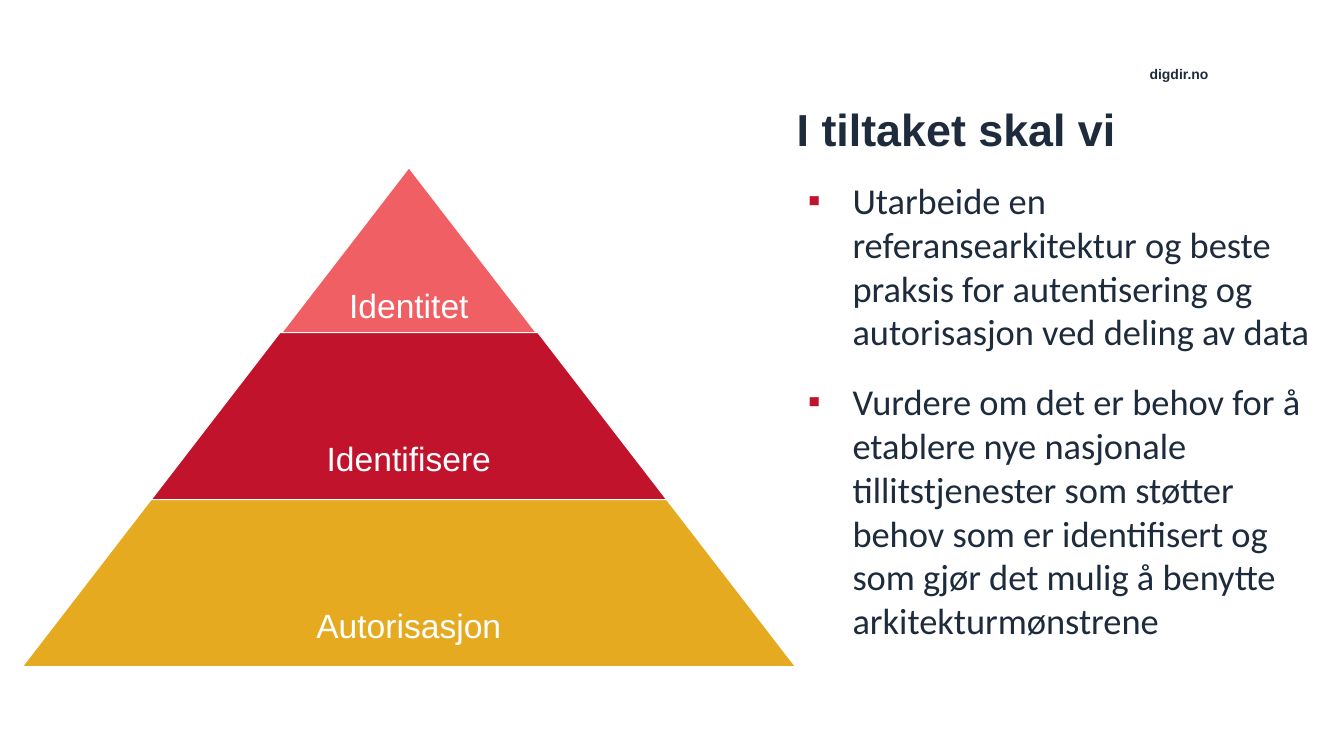
import pptx
import pptx.dml.color
import pptx.enum.shapes
import pptx.enum.text
import pptx.util
from lxml import etree
from pptx.util import Inches

NAVY = "1E2B3C"
RED = "C2132C"
WHITE = "FFFFFF"


def colour(value):
    return pptx.dml.color.RGBColor.from_string(value)


class SlideBuilder:
    heading_font = "Arial"
    body_font = "Calibri"

    def __init__(self, page):
        self.page = page

    def style(self, para, size, name, value, bold=False):
        para.font.size = pptx.util.Pt(size)
        para.font.name = name
        para.font.bold = bold
        para.font.color.rgb = colour(value)

    def title(self, text, left, top, width, height):
        box = self.page.shapes.title
        box.left, box.top = Inches(left), Inches(top)
        box.width, box.height = Inches(width), Inches(height)
        frame = box.text_frame
        frame.word_wrap = True
        frame.auto_size = pptx.enum.text.MSO_AUTO_SIZE.NONE
        frame.vertical_anchor = pptx.enum.text.MSO_ANCHOR.TOP
        frame.text = text
        para = frame.paragraphs[0]
        para.alignment = pptx.enum.text.PP_ALIGN.LEFT
        para.line_spacing = 0.9
        para.space_before = pptx.util.Pt(0)
        self.style(para, 42.7, self.heading_font, NAVY, bold=True)

    def text_box(self, left, top, width, height):
        box = self.page.shapes.add_textbox(
            Inches(left), Inches(top), Inches(width), Inches(height))
        box.text_frame.word_wrap = True
        return box.text_frame

    def label(self, text, *place):
        para = self.text_box(*place).paragraphs[0]
        para.text = text
        self.style(para, 13.3, self.heading_font, NAVY, bold=True)

    def tier(self, text, fill, centre, top, width, height, bottom_inset):
        shape = self.page.shapes.add_shape(
            pptx.enum.shapes.MSO_SHAPE.TRAPEZOID,
            Inches(centre - width / 2), Inches(top), Inches(width), Inches(height))
        shape.adjustments[0] = 0.771
        shape.shadow.inherit = False
        shape.fill.solid()
        shape.fill.fore_color.rgb = colour(fill)
        shape.line.color.rgb = colour(WHITE)
        shape.line.width = pptx.util.Pt(1)
        frame = shape.text_frame
        frame.word_wrap = False
        frame.vertical_anchor = pptx.enum.text.MSO_ANCHOR.BOTTOM
        frame.margin_left = frame.margin_right = frame.margin_top = Inches(0.04)
        frame.margin_bottom = Inches(bottom_inset)
        para = frame.paragraphs[0]
        para.text = text
        para.alignment = pptx.enum.text.PP_ALIGN.CENTER
        para.line_spacing = 0.9
        self.style(para, 32, self.heading_font, WHITE)

    def bullet(self, para):
        properties = para._p.get_or_add_pPr()
        properties.set("marL", str(Inches(0.59)))
        properties.set("indent", str(-Inches(0.59)))
        namespace = pptx.oxml.ns.qn
        bullet_colour = etree.SubElement(properties, namespace("a:buClr"))
        etree.SubElement(bullet_colour, namespace("a:srgbClr"), val=RED)
        etree.SubElement(properties, namespace("a:buFont"), typeface=self.heading_font)
        etree.SubElement(properties, namespace("a:buChar"), char="▪")

    def bullet_list(self, items, *place):
        frame = self.text_box(*place)
        for index, item in enumerate(items):
            para = frame.add_paragraph() if index else frame.paragraphs[0]
            para.text = item
            self.bullet(para)
            para.space_before = pptx.util.Pt(25 if index else 0)
            self.style(para, 34.7, self.body_font, NAVY)


def main():
    deck = pptx.Presentation()
    deck.slide_width, deck.slide_height = Inches(17.78), Inches(10)
    builder = SlideBuilder(deck.slides.add_slide(deck.slide_layouts[5]))

    builder.label("digdir.no", 15.11, 0.82, 1.13, 0.33)

    tiers = [
        ("Identitet", "F05F63", 2.22, 0.12),
        ("Identifisere", RED, 4.4, 0.28),
        ("Autorisasjon", "E5AA20", 6.61, 0.28),
    ]
    for level, (text, fill, top, bottom_inset) in enumerate(tiers, start=1):
        builder.tier(text, fill, 5.41, top, 3.41 * level, 2.21, bottom_inset)

    builder.bullet_list([
        "Utarbeide en referansearkitektur og beste praksis for autentisering "
        "og autorisasjon ved deling av data",
        "Vurdere om det er behov for å etablere nye nasjonale tillitstjenester "
        "som støtter behov som er identifisert og som gjør det mulig å benytte "
        "arkitekturmønstrene",
    ], 10.59, 2.31, 6.93, 6.32)

    builder.title("I tiltaket skal vi", 10.44, 1.37, 7.32, 0.76)
    deck.save("out.pptx")


if __name__ == "__main__":
    main()
